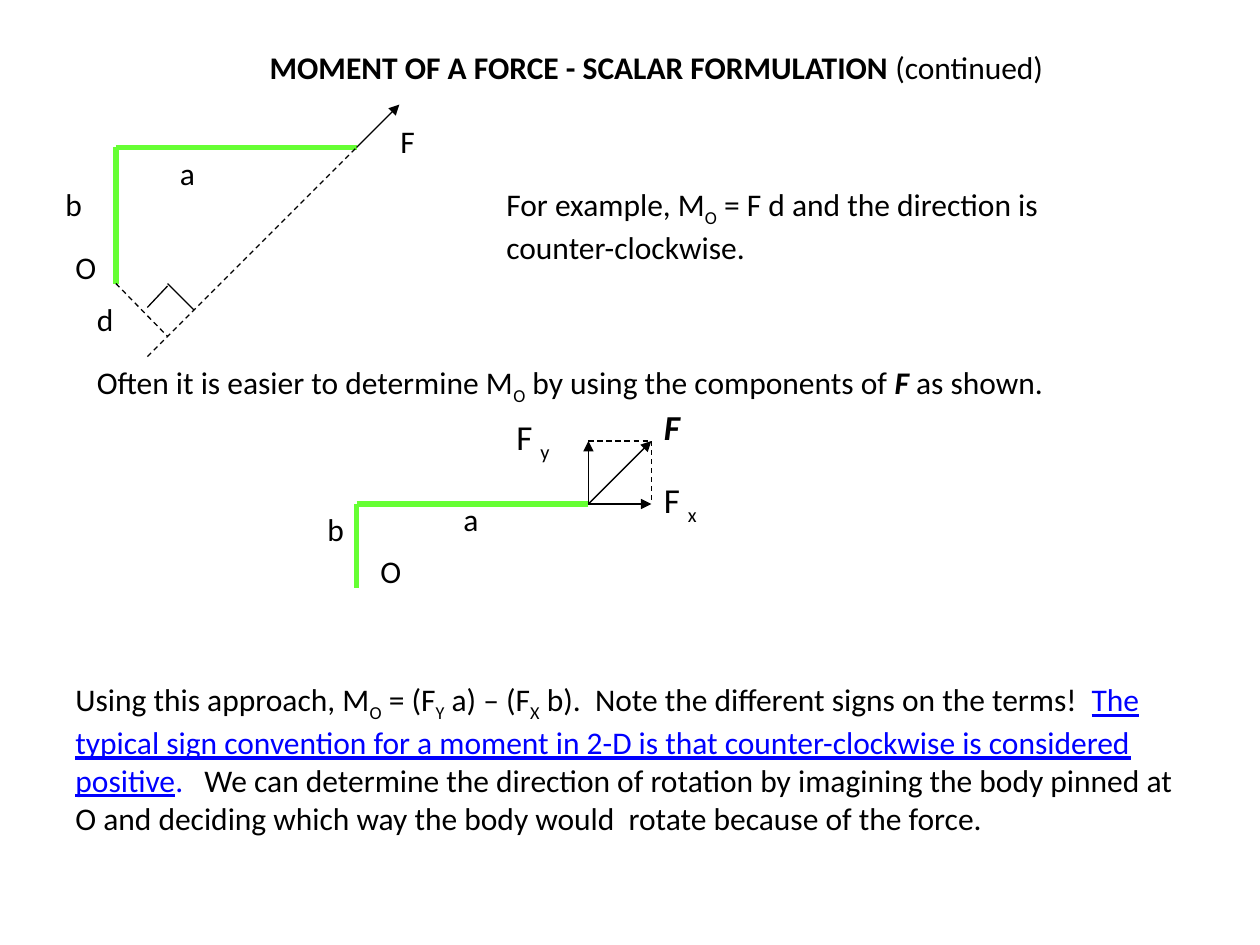
from lxml.etree import SubElement
from pptx import Presentation
from pptx.dml.color import RGBColor
from pptx.enum.dml import MSO_LINE
from pptx.enum.shapes import MSO_CONNECTOR
from pptx.enum.text import MSO_ANCHOR, MSO_AUTO_SIZE, PP_ALIGN
from pptx.oxml.ns import qn
from pptx.util import Inches, Pt

BLACK, GREEN, BLUE = "000000", "66FF33", "0000FF"
BOLD = {"bold": True}
BOLD_ITALIC = {"bold": True, "italic": True}
SUBSCRIPT = {"baseline": "-25000"}
BLUE_TEXT = {"color": BLUE}
BLUE_UNDERLINED = {"color": BLUE, "underline": True}

TITLE = [("MOMENT OF A FORCE - SCALAR FORMULATION ", BOLD), ("(continued)", {})]

PARAGRAPHS = [
    ((3.92, 1.42, 4.42, 0.9), [
        ("For example, M", {}), ("O", SUBSCRIPT),
        (" = F d and the direction is counter-clockwise.", {})]),
    ((0.67, 2.83, 8.83, 0.4), [
        ("Often it is easier to determine M", {}), ("O", SUBSCRIPT),
        (" by using the components of ", {}), ("F", BOLD_ITALIC), (" as shown.", {})]),
    ((0.5, 5.35, 9.08, 1.31), [
        ("Using this approach, M", {}), ("O", SUBSCRIPT), (" = (F", {}),
        ("Y", SUBSCRIPT), (" a) – (F", {}), ("X", SUBSCRIPT),
        (" b).  Note the different signs on the terms!  ", {}),
        ("The typical sign convention for a moment in 2-D is that "
         "counter-clockwise is considered positive", BLUE_UNDERLINED),
        (".", BLUE_TEXT),
        ("   We can determine the direction of rotation by imagining the body "
         "pinned at O and deciding which way the body would  rotate because "
         "of the force.", {})]),
]


def rgb(color):
    """Turn a hex string into a colour."""
    return RGBColor.from_string(color)


def place(shape, box):
    """Set the position and size of a shape in inches."""
    for name, value in zip(("left", "top", "width", "height"), box):
        setattr(shape, name, Inches(value))


def write_runs(text_frame, runs, size=18, alignment=PP_ALIGN.LEFT):
    """Write one paragraph of formatted runs."""
    frame_format = {"word_wrap": True, "auto_size": MSO_AUTO_SIZE.NONE,
                    "vertical_anchor": MSO_ANCHOR.TOP}
    for name, value in frame_format.items():
        setattr(text_frame, name, value)
    paragraph = text_frame.paragraphs[0]
    paragraph.alignment = alignment
    for text, changes in runs:
        run = paragraph.add_run()
        run.text = text
        values = {"name": "Calibri", "size": Pt(size), "bold": False, **changes}
        run.font.color.rgb = rgb(values.pop("color", BLACK))
        baseline = values.pop("baseline", None)
        for name, value in values.items():
            setattr(run.font, name, value)
        if baseline:
            run._r.get_or_add_rPr().set("baseline", baseline)


def add_text(shapes, box, runs, size=18):
    """Add a text box."""
    shape = shapes.add_textbox(*map(Inches, box))
    write_runs(shape.text_frame, runs, size)


def add_label(shapes, text, left, top, width=0.5):
    """Add a plain one-letter label."""
    add_text(shapes, (left, top, width, 0.5), [(text, {})])


def add_line(shapes, start, end, color=BLACK, width=0.75, dashed=False, arrow=False):
    """Add a straight line, optionally dashed or with an arrowhead."""
    connector = shapes.add_connector(
        MSO_CONNECTOR.STRAIGHT, *map(Inches, (*start, *end)))
    connector.line.color.rgb = rgb(color)
    connector.line.width = Pt(width)
    if dashed:
        connector.line.dash_style = MSO_LINE.DASH
    if arrow:
        SubElement(connector.line._get_or_add_ln(), qn("a:tailEnd"), type="triangle")
    SubElement(connector._element.spPr, qn("a:effectLst"))


def add_bar(shapes, bottom, corner, tip):
    """Add the bent green bar."""
    for end in (bottom, tip):
        add_line(shapes, corner, end, GREEN, 3)


def draw_moment_arm(shapes):
    """Draw the force with its perpendicular distance from O."""
    pivot, tip = (0.92, 2.25), (2.83, 1.17)
    add_bar(shapes, pivot, (0.92, 1.17), tip)
    add_line(shapes, pivot, (1.33, 2.67), dashed=True)
    add_line(shapes, (1.17, 2.83), tip, dashed=True)
    add_line(shapes, tip, (3.17, 0.83), arrow=True)
    add_line(shapes, (1.17, 2.44), (1.33, 2.27))
    add_line(shapes, (1.33, 2.25), (1.54, 2.46))
    add_label(shapes, "F", 3.08, 0.92)
    add_label(shapes, "a", 1.33, 1.17)
    add_label(shapes, "b", 0.42, 1.42, 0.33)
    add_label(shapes, "d", 0.67, 2.33)
    add_label(shapes, "O", 0.5, 1.92, 0.42)


def draw_components(shapes):
    """Draw the force resolved into its two components."""
    tip, top, right, corner = (4.67, 4), (4.67, 3.5), (5.17, 4), (5.17, 3.5)
    add_bar(shapes, (2.83, 4.67), (2.83, 4), tip)
    for end in (top, right, corner):
        add_line(shapes, tip, end, arrow=True)
    add_line(shapes, top, corner, dashed=True)
    add_line(shapes, corner, right, dashed=True)
    add_label(shapes, "a", 3.58, 3.92)
    add_label(shapes, "b", 2.5, 4, 0.33)
    add_label(shapes, "O", 2.92, 4.33, 0.42)
    add_text(shapes, (5.17, 3.17, 0.5, 0.43), [("F", BOLD_ITALIC)], 20)
    for axis, left, top_edge in (("x", 5.17, 3.75), ("y", 4, 3.25)):
        add_text(shapes, (left, top_edge, 0.67, 0.43),
                 [("F ", {}), (axis, SUBSCRIPT)], 20)


def main():
    """Build and save the slide."""
    presentation = Presentation()
    presentation.slide_width = Inches(10)
    presentation.slide_height = Inches(7.5)
    slide = presentation.slides.add_slide(presentation.slide_layouts[5])
    title = slide.shapes.title
    place(title, (0.42, 0.33, 9.58, 0.4))
    write_runs(title.text_frame, TITLE, alignment=PP_ALIGN.CENTER)
    for box, runs in PARAGRAPHS:
        add_text(slide.shapes, box, runs)
    for draw in (draw_moment_arm, draw_components):
        draw(slide.shapes.add_group_shape().shapes)
    presentation.save("out.pptx")


if __name__ == "__main__":
    main()
